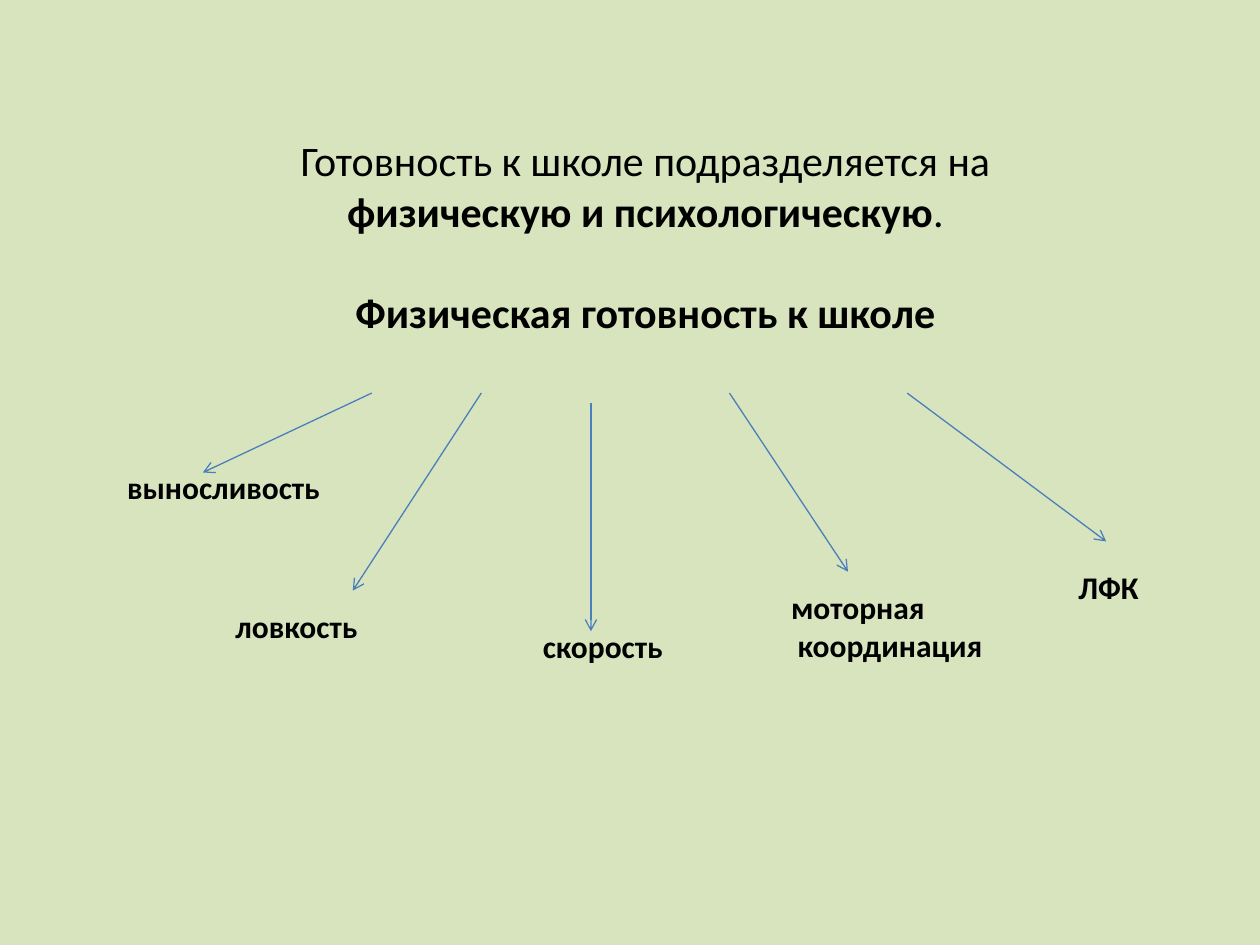
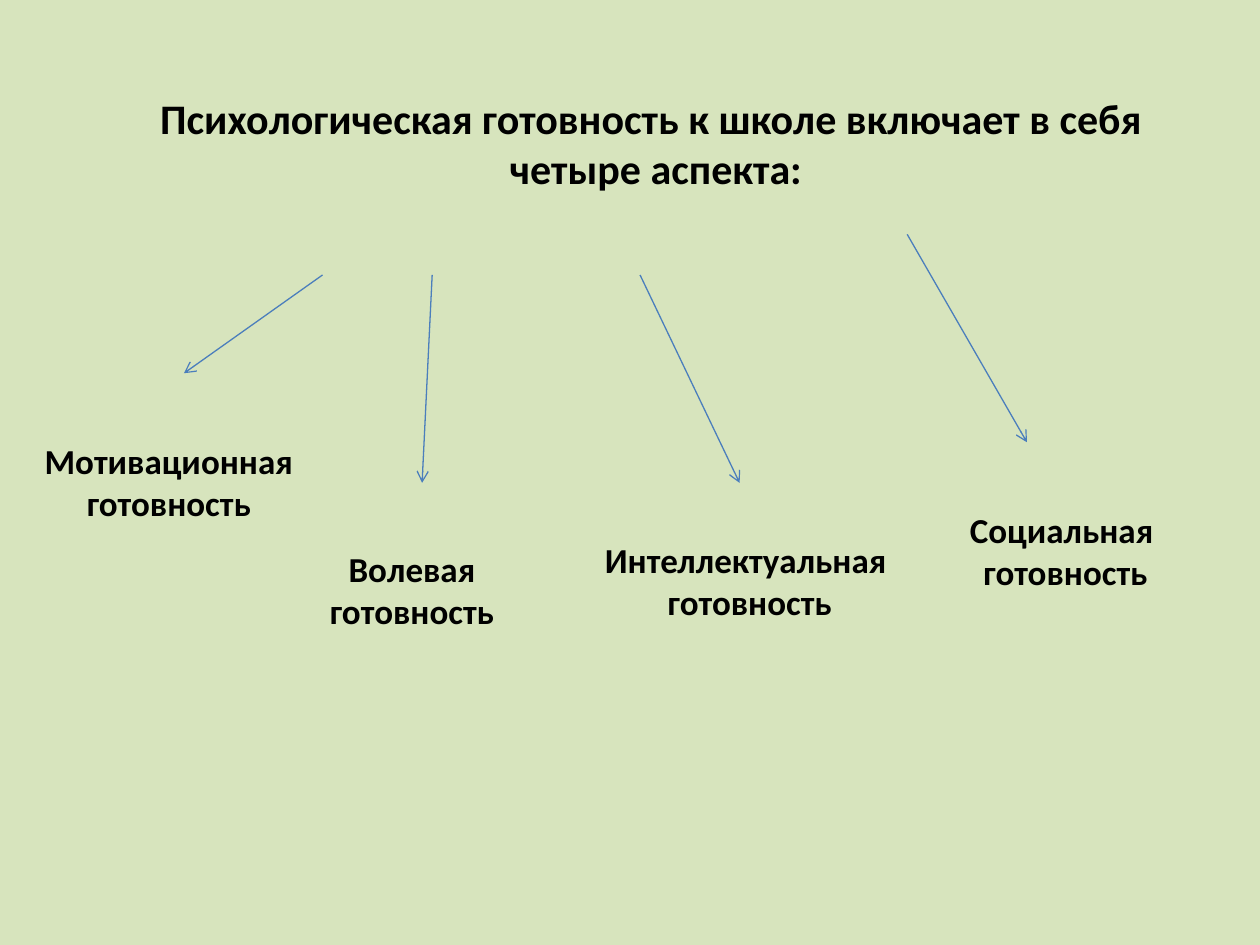
from dataclasses import dataclass

from lxml import etree
from pptx import Presentation, util as u
from pptx.dml.color import RGBColor
from pptx.enum import shapes, text
from pptx.oxml.ns import qn


@dataclass(frozen=True)
class Theme:
    """Colours, font and type sizes shared by the slides, in points."""
    back: str = "D7E4BD"
    ink: str = "000000"
    line: str = "4B7EBC"
    font: str = "Calibri"
    head: int = 24
    stroke: float = 0.75
    lead: float = 1.22
    pad: float = 7.2


T = Theme()
WIDE, HIGH = u.Inches(10), u.Inches(7.5)
LEFT, MID = text.PP_ALIGN.LEFT, text.PP_ALIGN.CENTER

# Places are percentages of the slide: box (left, top, width), arrow (from, to).
SLIDES = [
    {
        "title": [
            [("Готовность к школе подразделяется на ", False)],
            [("физическую и психологическую", True), (". ", False)],
            [("Физическая готовность к школе ", True)],
        ],
        "box": (6.7, 13.6, 89.8), "gap": {2: T.head * T.lead},
        "size": 18, "align": [LEFT, MID],
        "parts": [
            (["выносливость"], (9.1, 48.9, 17.9), (29.5, 41.6), (16.1, 50)),
            (["ловкость"], (17.7, 63.6, 12.6), (38.2, 41.6), (28, 62.5)),
            (["скорость"], (42.1, 65.7, 11.6), (46.9, 42.7), (46.9, 66.8)),
            (["моторная", "координация"], (61.8, 61.6, 17.7),
             (57.9, 41.6), (67.3, 60.5)),
            (["ЛФК"], (84.6, 59.5, 11.4), (72, 41.6), (87.8, 57.3)),
        ],
    },
    {
        "title": [
            [("Психологическая готовность к школе включает в себя ", True)],
            [("четыре аспекта:", True)],
        ],
        "box": (4.1, 9.1, 95.9), "gap": {},
        "size": 20, "align": [MID, MID],
        "parts": [
            (["Мотивационная", "готовность"], (2, 45.9, 22.8),
             (25.6, 29.1), (14.6, 39.5)),
            (["Волевая готовность"], (20.9, 57.3, 23.6),
             (34.3, 29.1), (33.5, 51.1)),
            (["Интеллектуальная ", "готовность"], (46.9, 56.3, 25.2),
             (50.8, 29.1), (58.7, 51.1)),
            (["Социальная", " готовность"], (75.2, 53.2, 18.1),
             (72, 24.8), (81.5, 46.8)),
        ],
    },
]


def place(x, y):
    """Turn slide percentages into lengths."""
    return int(WIDE * x / 100), int(HIGH * y / 100)


def write(shape, lines, *, box, size, align, gap=None, rows=None):
    """Place a shape and fill it with lines of (text, bold) runs."""
    gap = gap or {}
    shape.left, shape.top = place(*box[:2])
    shape.width = int(WIDE * box[2] / 100)
    rows = rows or len(lines)
    shape.height = u.Pt(rows * size * T.lead + sum(gap.values()) + T.pad)
    frame = shape.text_frame
    frame.word_wrap = True
    frame.auto_size = text.MSO_AUTO_SIZE.NONE
    frame.vertical_anchor = text.MSO_ANCHOR.TOP
    for i, line in enumerate(lines):
        para = frame.add_paragraph() if i else frame.paragraphs[0]
        para.alignment = align[i]
        para.space_before = u.Pt(gap.get(i, 0))
        for words, bold in line:
            run = para.add_run()
            run.text = words
            font = run.font
            font.name, font.size, font.bold = T.font, u.Pt(size), bold
            font.color.rgb = RGBColor.from_string(T.ink)


def arrow(slide, start, end):
    """Draw a thin line with an open arrowhead at its end."""
    link = slide.shapes.add_connector(
        shapes.MSO_CONNECTOR.STRAIGHT, *place(*start), *place(*end))
    link.line.color.rgb = RGBColor.from_string(T.line)
    link.line.width = u.Pt(T.stroke)
    etree.SubElement(link.line._get_or_add_ln(), qn("a:tailEnd"), type="arrow")
    etree.SubElement(link._element.spPr, qn("a:effectLst"))


def build(deck, data):
    """Add one slide with a heading and its fan of labelled arrows."""
    slide = deck.slides.add_slide(deck.slide_layouts[5])
    write(slide.shapes.title, data["title"], box=data["box"], size=T.head,
          align=[MID] * len(data["title"]), gap=data["gap"])
    for words, box, start, end in data["parts"]:
        arrow(slide, start, end)
        label = slide.shapes.add_textbox(0, 0, 0, 0)
        rows = max(len(words), words[0].strip().count(" ") + 1)
        write(label, [[(line, True)] for line in words], box=box,
              size=data["size"], align=data["align"], rows=rows)


def main():
    """Build and save the deck."""
    deck = Presentation()
    deck.slide_width, deck.slide_height = WIDE, HIGH
    fill = deck.slide_master.background.fill
    fill.solid()
    fill.fore_color.rgb = RGBColor.from_string(T.back)
    for data in SLIDES:
        build(deck, data)
    deck.save("out.pptx")


if __name__ == "__main__":
    main()
